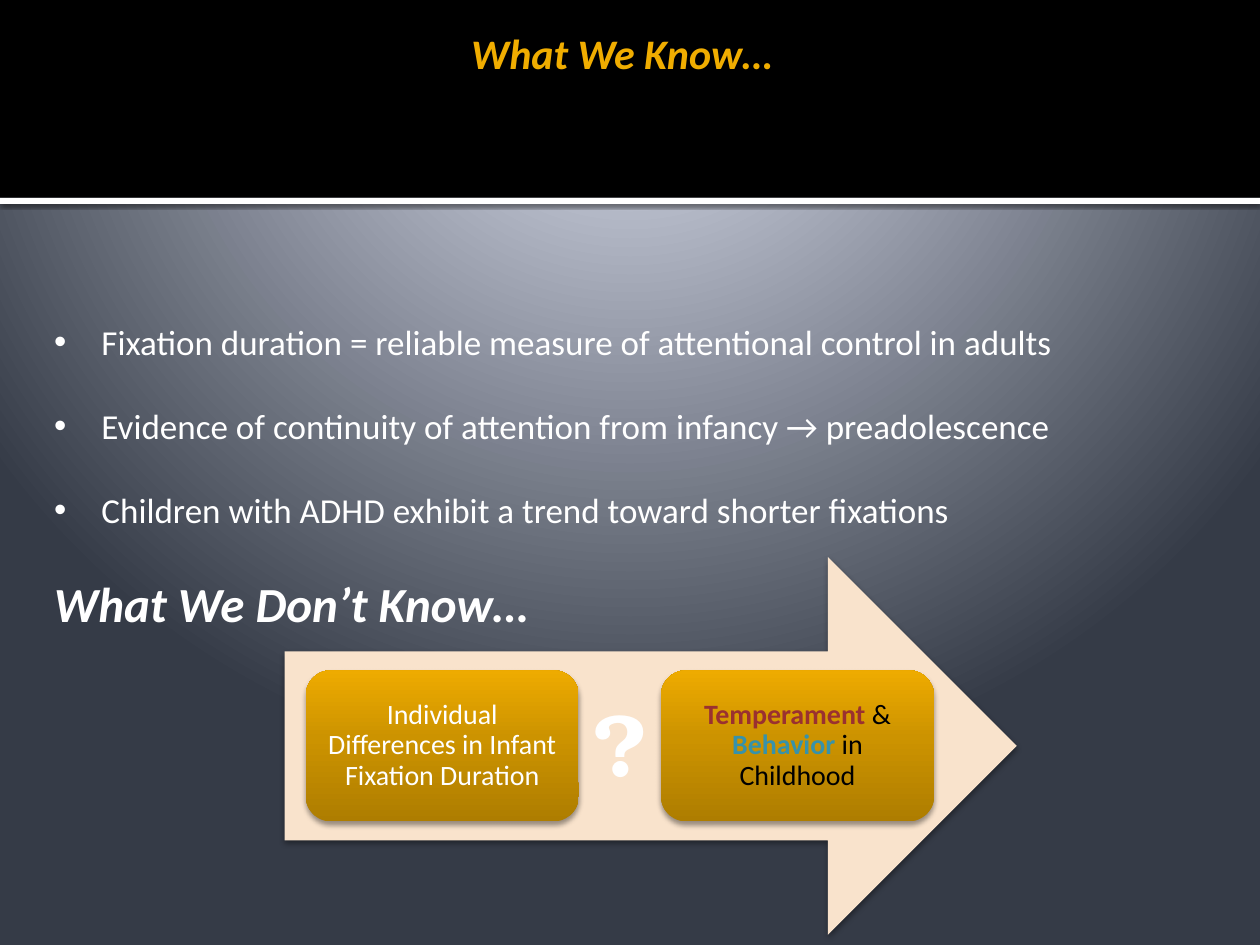
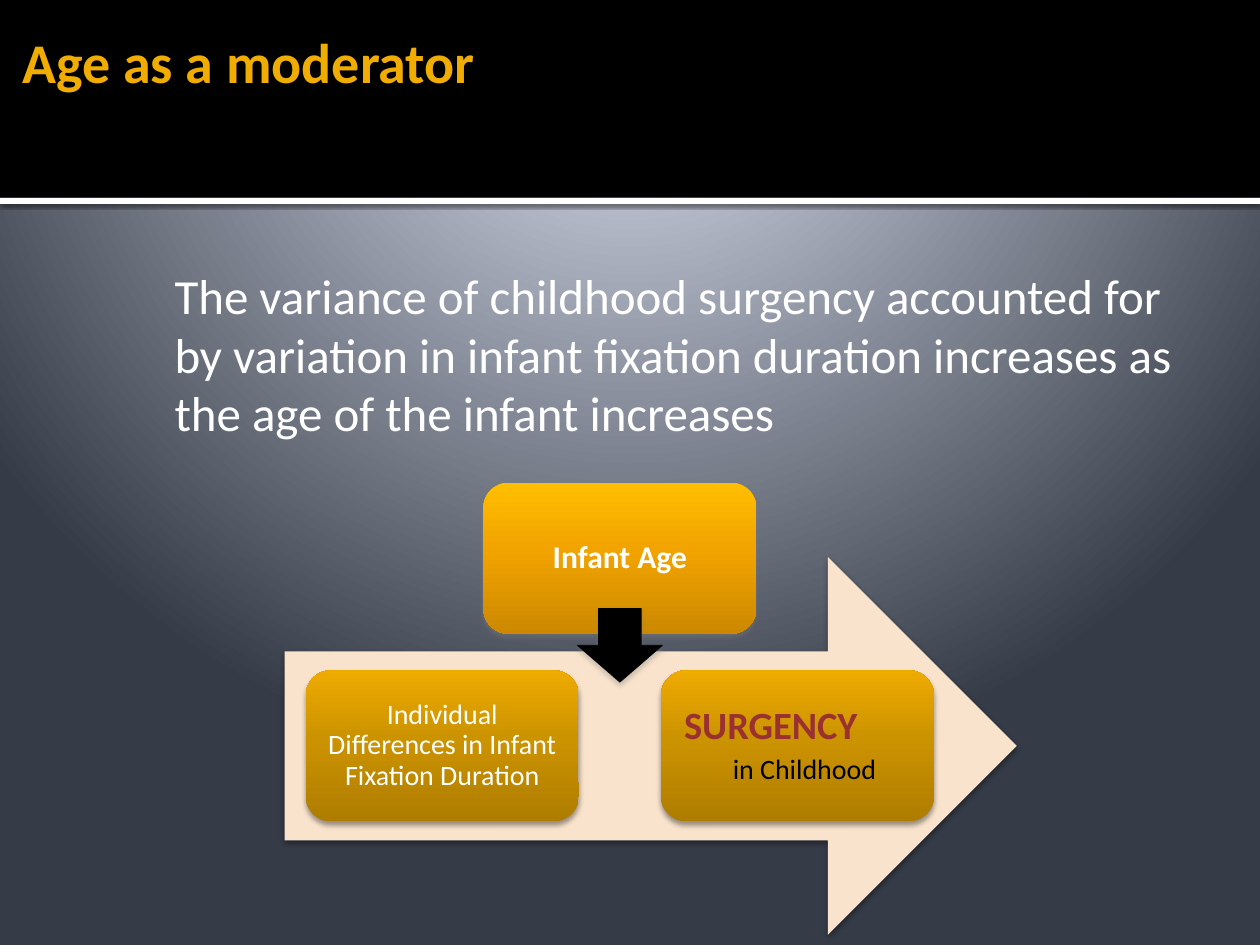
from dataclasses import dataclass

from pptx import Presentation
from pptx import util as u
from pptx.dml.color import RGBColor
from pptx.enum import shapes, text
from pptx.oxml import parse_xml
from pptx.oxml.ns import nsdecls, qn

WHITE = RGBColor(0xFF, 0xFF, 0xFF)
BLACK = RGBColor(0x00, 0x00, 0x00)
GRAY = RGBColor(0x80, 0x80, 0x80)
GOLD = RGBColor(0xF0, 0xAD, 0x00)
CREAM = RGBColor(0xF9, 0xE3, 0xCC)
RED = RGBColor(0x9A, 0x31, 0x30)
TEAL = RGBColor(0x37, 0x92, 0xAA)

SKY = RGBColor(0xC1, 0xC5, 0xD3)
BACKDROP_STOPS = [(0, SKY), (12, SKY), (20, RGBColor(0xBF, 0xC4, 0xD2)),
                  (100, RGBColor(0x35, 0x3B, 0x47))]
CARD_STOPS = [(0, RGBColor(0xAE, 0x7D, 0x00)), (55, RGBColor(0xCC, 0x93, 0x00)),
              (100, RGBColor(0xEE, 0xAB, 0x00))]
AGE_STOPS = [(0, RGBColor(0xFF, 0xBF, 0x00)), (45, RGBColor(0xF1, 0xA3, 0x00)),
             (100, RGBColor(0xCC, 0x89, 0x00))]
RADIAL = ('<a:path path="circle"><a:fillToRect l="10000" t="-25000" '
          'r="10000" b="125000"/></a:path>')
UPWARD = '<a:lin ang="16200000" scaled="0"/>'
DOWNWARD = '<a:lin ang="5400000" scaled="0"/>'

CENTER, LEFT = text.PP_ALIGN.CENTER, text.PP_ALIGN.LEFT
SHAPE = shapes.MSO_SHAPE


@dataclass
class Box:
    """A rectangle in points."""
    left: float
    top: float
    width: float
    height: float

    def lengths(self):
        """Return the four lengths for python-pptx."""
        return [u.Pt(value) for value in (self.left, self.top, self.width, self.height)]


TITLE_BOX = Box(5.76, 12.24, 695.5, 91.4)
PROCESS_BOX = Box(162.72, 318.24, 418.3, 216)
CARD_WIDTH, CARD_STEP, CARD_INSET = 156, 203, 12
GAP_CENTER = PROCESS_BOX.left + CARD_INSET + (CARD_WIDTH + CARD_STEP) / 2


def centered_box(center, top, width, height):
    """Return a box centred on a horizontal position."""
    return Box(center - width / 2, top, width, height)


def apply(target, values):
    """Set the attributes of an object from a dict."""
    for name, value in values.items():
        setattr(target, name, value)


def place(shape, box):
    """Move a shape to a box."""
    apply(shape, dict(zip(("left", "top", "width", "height"), box.lengths())))


def set_gradient(fill, parent, stops, direction):
    """Give a fill several gradient stops."""
    fill.solid()
    marks = "".join(f'<a:gs pos="{position * 1000}"><a:srgbClr val="{color}"/></a:gs>'
                    for position, color in stops)
    gradient = parse_xml(f'<a:gradFill {nsdecls("a")} rotWithShape="1">'
                         f'<a:gsLst>{marks}</a:gsLst>{direction}</a:gradFill>')
    parent.replace(parent.find(qn("a:solidFill")), gradient)


def add_shadow(shape, color=BLACK, opacity=38, blur=3.1, distance=2):
    """Cast a shadow straight down."""
    shape.element.spPr.find(qn("a:effectLst")).append(parse_xml(
        f'<a:outerShdw {nsdecls("a")} blurRad="{u.Pt(blur)}" dist="{u.Pt(distance)}" '
        f'dir="5400000" algn="ctr" rotWithShape="0"><a:srgbClr val="{color}">'
        f'<a:alpha val="{opacity * 1000}"/></a:srgbClr></a:outerShdw>'))


def add_block(container, kind, box, color):
    """Add a plain filled shape without line or shadow."""
    shape = container.shapes.add_shape(kind, *box.lengths())
    shape.shadow.inherit = False
    shape.fill.solid()
    shape.fill.fore_color.rgb = color
    shape.line.fill.background()
    return shape


def set_frame(shape, anchor=text.MSO_ANCHOR.TOP, margins=(7.2, 3.6, 7.2, 3.6)):
    """Set wrapping, anchor and margins of a text frame and return it."""
    frame = shape.text_frame
    apply(frame, {"word_wrap": True, "auto_size": text.MSO_AUTO_SIZE.NONE,
                  "vertical_anchor": anchor})
    sides = ("margin_left", "margin_top", "margin_right", "margin_bottom")
    apply(frame, {side: u.Pt(value) for side, value in zip(sides, margins)})
    return frame


def write(paragraph, runs, size, align=LEFT, spacing=1.0, before=0, italic=False,
          font="Calibri"):
    """Write runs of (text, colour, bold) into a paragraph."""
    apply(paragraph, {"alignment": align, "line_spacing": spacing,
                      "space_before": u.Pt(before), "space_after": u.Pt(0)})
    for words, color, bold in runs:
        run = paragraph.add_run()
        run.text = words
        apply(run.font, {"name": font, "size": u.Pt(size), "bold": bold, "italic": italic})
        run.font.color.rgb = color


def set_indent(paragraph, left, first=0, bullet=None):
    """Set the indents of a paragraph and its bullet."""
    properties = paragraph._p.get_or_add_pPr()
    properties.set("marL", str(u.Pt(left)))
    properties.set("indent", str(u.Pt(first)))
    mark = (f'<a:buChar {nsdecls("a")} char="{bullet}"/>' if bullet
            else f'<a:buNone {nsdecls("a")}/>')
    if bullet:
        properties.append(parse_xml(f'<a:buFont {nsdecls("a")} typeface="Arial"/>'))
    properties.append(parse_xml(mark))


def style_template(presentation, layout, slide):
    """Put the backdrop on the master and the header bands on the layout."""
    master = presentation.slide_master
    fill = master.background.fill
    fill.solid()
    parent = next(master.element.iter(qn("p:bgPr")))
    set_gradient(fill, parent, BACKDROP_STOPS, RADIAL)
    stripe = add_block(slide, SHAPE.RECTANGLE, Box(0, 113, 720, 3.6), WHITE)
    add_shadow(stripe, opacity=60, blur=2.5, distance=0.8)
    band = add_block(slide, SHAPE.RECTANGLE, Box(0, 0, 720, 113), BLACK)
    for position, shape in enumerate((stripe, band), start=2):
        layout.shapes.element.insert(position, shape.element)


def add_title(slide, words, size, align=LEFT, italic=False):
    """Fill the title placeholder."""
    place(slide.shapes.title, TITLE_BOX)
    frame = set_frame(slide.shapes.title, margins=(7.2, 3.6, 3.6, 3.6))
    write(frame.paragraphs[0], [(words, GOLD, True)], size, align, italic=italic)


def add_body(slide, box, lines, size, left, first=0, bullet=None, gap=0):
    """Fill the body placeholder with evenly spaced lines."""
    body = slide.placeholders[1]
    place(body, box)
    frame = set_frame(body)
    for number, line in enumerate(lines):
        paragraph = frame.add_paragraph() if number else frame.paragraphs[0]
        write(paragraph, [(line, WHITE, False)], size, before=gap if number else 0)
        set_indent(paragraph, left, first, bullet)


def add_label(slide, box, words, size, **formats):
    """Add a bold white text box."""
    frame = set_frame(slide.shapes.add_textbox(*box.lengths()))
    write(frame.paragraphs[0], [(words, WHITE, True)], size, **formats)


def add_card(container, box, stops, direction, shadow=BLACK):
    """Add a rounded gradient card and return its text frame."""
    card = add_block(container, SHAPE.ROUNDED_RECTANGLE, box, GOLD)
    set_gradient(card.fill, card.element.spPr, stops, direction)
    add_shadow(card, shadow)
    return set_frame(card, text.MSO_ANCHOR.MIDDLE, (5, 5, 5, 5))


def add_process(slide, box):
    """Draw the big arrow with two cards and return the outcome card's frame."""
    group = slide.shapes.add_group_shape()
    add_shadow(add_block(group, SHAPE.RIGHT_ARROW, box, CREAM))
    cause, outcome = [
        add_card(group, Box(box.left + CARD_INSET + column * CARD_STEP,
                            box.top + 0.3 * box.height, CARD_WIDTH, 0.4 * box.height),
                 CARD_STOPS, UPWARD)
        for column in range(2)]
    write(cause.paragraphs[0],
          [("Individual Differences in Infant Fixation Duration", WHITE, False)],
          16, CENTER, 0.9)
    return outcome


def build_knowledge(slide):
    """Build the slide on what is known and unknown."""
    add_title(slide, "What We Know…", 24, CENTER, italic=True)
    add_body(slide, Box(23.76, 179.28, 678, 128),
             ["Fixation duration = reliable measure of attentional control in adults",
              "Evidence of continuity of attention from infancy → preadolescence",
              "Children with ADHD exhibit a trend toward shorter fixations"],
             20, 27, -27, "•", gap=24)
    outcome = add_process(slide, PROCESS_BOX)
    write(outcome.paragraphs[0],
          [("Temperament", RED, True), (" & ", BLACK, False),
           ("Behavior", TEAL, True), (" in Childhood", BLACK, False)], 16, CENTER, 0.9)
    add_label(slide, Box(23.76, 324, 678, 41), "What We Don’t Know…", 28, italic=True)
    add_label(slide, centered_box(GAP_CENTER, 390.24, 84, 68), "?", 50,
              align=CENTER, font="TeX Gyre Bonum")


def build_moderator(slide):
    """Build the slide on age as a moderator."""
    add_title(slide, "Age as a moderator", 32)
    add_body(slide, Box(29.52, 148, 648, 109),
             ["The variance of childhood surgency accounted for by variation in infant "
              "fixation duration increases as the age of the infant increases"], 28, 63)
    outcome = add_process(slide, PROCESS_BOX)
    write(outcome.paragraphs[0], [("SURGENCY", RED, True)], 22, LEFT, 0.9)
    set_indent(outcome.paragraphs[0], 4)
    childhood = outcome.add_paragraph()
    write(childhood, [("in Childhood", BLACK, False)], 16, CENTER, 0.9, before=4)
    set_indent(childhood, 8)
    age = add_card(slide, centered_box(GAP_CENTER, 275.76, CARD_WIDTH, 86.4),
                   AGE_STOPS, DOWNWARD, GRAY)
    write(age.paragraphs[0], [("Infant Age", WHITE, True)], 18, CENTER, 0.9)
    pointer = add_block(slide, SHAPE.DOWN_ARROW,
                        centered_box(GAP_CENTER, 347.76, 48.5, 42), BLACK)
    pointer.line.color.rgb = BLACK
    pointer.line.width = u.Pt(0.5)
    add_shadow(pointer, GRAY)


def main():
    """Build and save the presentation."""
    presentation = Presentation()
    presentation.slide_width, presentation.slide_height = u.Pt(720), u.Pt(540)
    layout = presentation.slide_layouts[1]
    knowledge, moderator = [presentation.slides.add_slide(layout) for _ in range(2)]
    style_template(presentation, layout, knowledge)
    build_knowledge(knowledge)
    build_moderator(moderator)
    presentation.save("out.pptx")


if __name__ == "__main__":
    main()
